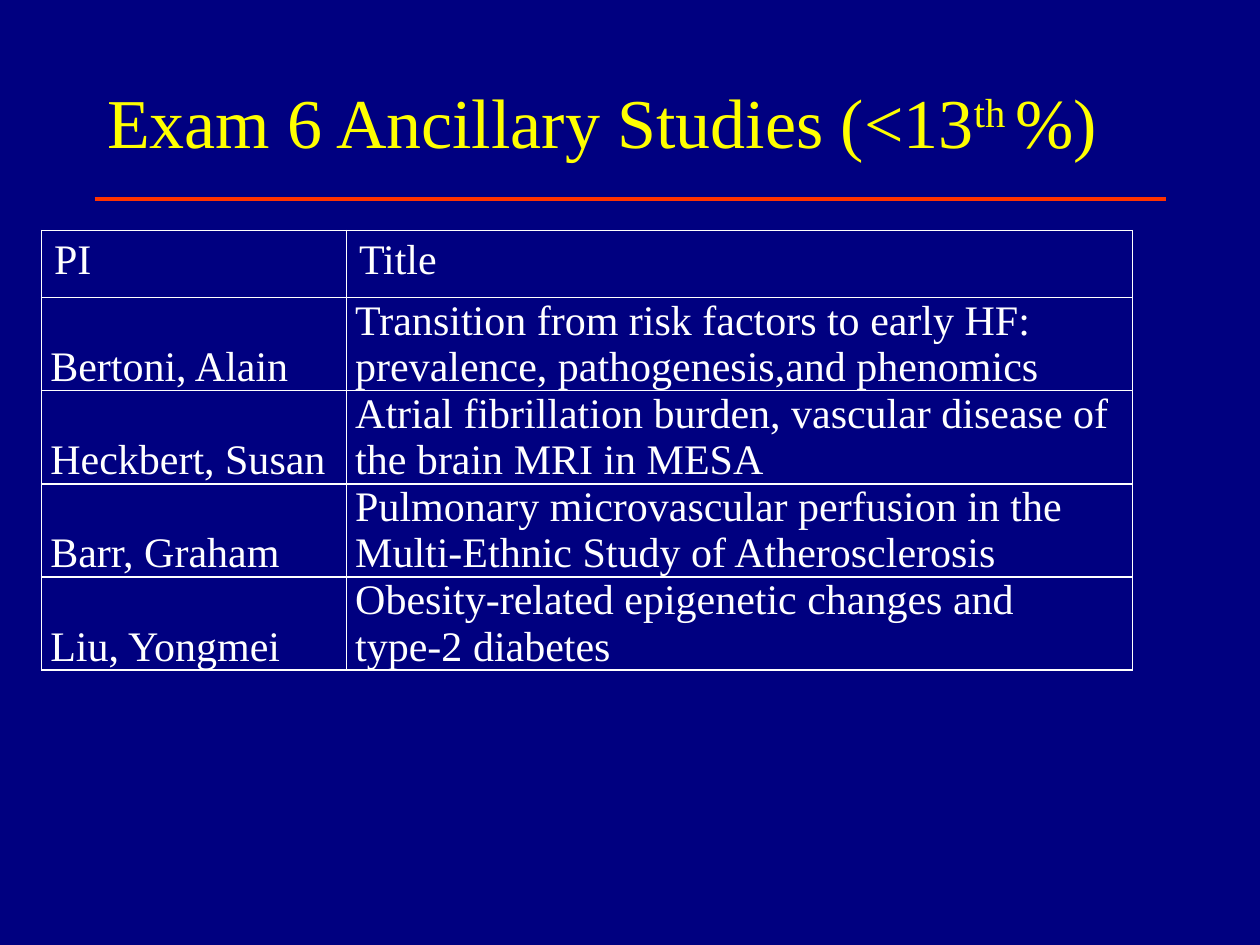
from lxml.etree import SubElement
from pptx import Presentation
from pptx.dml.color import RGBColor
from pptx.enum.shapes import MSO_CONNECTOR
from pptx.enum.text import MSO_ANCHOR, MSO_AUTO_SIZE, PP_ALIGN
from pptx.oxml.ns import qn
from pptx.util import Inches, Pt

# Content: title pieces with their baseline shift in percent, then table rows
TITLE = [("Exam 6 Ancillary Studies (<13", 0), ("th ", 30), ("%)", 0)]
STUDIES = [
    ("PI", "Title"),
    ("Bertoni, Alain", "Transition from risk factors to early HF: "
                       "prevalence, pathogenesis,and phenomics"),
    ("Heckbert, Susan", "Atrial fibrillation burden, vascular disease of "
                        "the brain MRI in MESA"),
    ("Barr, Graham", "Pulmonary microvascular perfusion in the "
                     "Multi-Ethnic Study of Atherosclerosis"),
    ("Liu, Yongmei", "Obesity-related epigenetic changes and type-2 diabetes"),
]
THEME = {
    "font": "Times New Roman", "title_size": 40, "table_size": 24,
    "background": "000080", "title": "FFFF00", "text": "FFFFFF",
    "rule": "FF3300", "border": "FFFFFF", "rule_width": 2, "border_width": 1,
}
LEFT, WIDTH = 0.75, 8.5
TITLE_TOP, TITLE_HEIGHT = 0.33, 1.25
TABLE_LEFT, TABLE_TOP = 0.33, 1.83
COLUMNS = (2.42, 6.24)
HEADER_HEIGHT, ROW_HEIGHT = 0.53, 0.74


def color(name):
    return RGBColor.from_string(THEME[name])


def style(span, size, color_name):
    span.font.name = THEME["font"]
    span.font.size = Pt(THEME[size])
    span.font.color.rgb = color(color_name)


def add_borders(cell):
    properties = cell._tc.get_or_add_tcPr()
    for position, side in enumerate(("lnL", "lnR", "lnT", "lnB")):
        line = properties.makeelement(
            qn(f"a:{side}"), {"w": str(Pt(THEME["border_width"]))})
        fill = SubElement(line, qn("a:solidFill"))
        SubElement(fill, qn("a:srgbClr"), val=THEME["border"])
        properties.insert(position, line)


def add_title(slide):
    box = slide.shapes.title
    box.left, box.top = Inches(LEFT), Inches(TITLE_TOP)
    box.width, box.height = Inches(WIDTH), Inches(TITLE_HEIGHT)
    frame = box.text_frame
    frame.auto_size = MSO_AUTO_SIZE.NONE
    frame.vertical_anchor = MSO_ANCHOR.MIDDLE
    para = frame.paragraphs[0]
    para.alignment = PP_ALIGN.LEFT
    for text, shift in TITLE:
        span = para.add_run()
        span.text = text
        style(span, "title_size", "title")
        if shift:
            span._r.get_or_add_rPr().set("baseline", str(shift * 1000))


def add_rule(slide):
    y = Inches(TITLE_TOP + TITLE_HEIGHT)
    rule = slide.shapes.add_connector(
        MSO_CONNECTOR.STRAIGHT, Inches(LEFT), y, Inches(LEFT + WIDTH), y)
    rule.line.color.rgb = color("rule")
    rule.line.width = Pt(THEME["rule_width"])
    SubElement(rule._element.spPr, qn("a:effectLst"))


def add_studies(slide):
    heights = [HEADER_HEIGHT] + [ROW_HEIGHT] * (len(STUDIES) - 1)
    table = slide.shapes.add_table(
        len(STUDIES), len(COLUMNS), Inches(TABLE_LEFT), Inches(TABLE_TOP),
        Inches(sum(COLUMNS)), Inches(sum(heights))).table
    table.first_row = table.horz_banding = False
    for column, width in zip(table.columns, COLUMNS):
        column.width = Inches(width)
    for index, (row, height) in enumerate(zip(table.rows, heights)):
        row.height = Inches(height)
        for cell, text in zip(row.cells, STUDIES[index]):
            cell.text_frame.text = text
            style(cell.text_frame.paragraphs[0].runs[0], "table_size", "text")
            cell.fill.background()
            add_borders(cell)
            # Study rows sit on the bottom edge with tight margins
            if index > 0:
                cell.vertical_anchor = MSO_ANCHOR.BOTTOM
                cell.margin_left = cell.margin_right = Inches(0.07)
                cell.margin_top = cell.margin_bottom = 0


def main():
    deck = Presentation()
    deck.slide_width, deck.slide_height = Inches(10), Inches(7.5)
    slide = deck.slides.add_slide(deck.slide_layouts.get_by_name("Title Only"))
    slide.background.fill.solid()
    slide.background.fill.fore_color.rgb = color("background")
    add_rule(slide)
    add_title(slide)
    add_studies(slide)
    deck.save("out.pptx")


if __name__ == "__main__":
    main()
